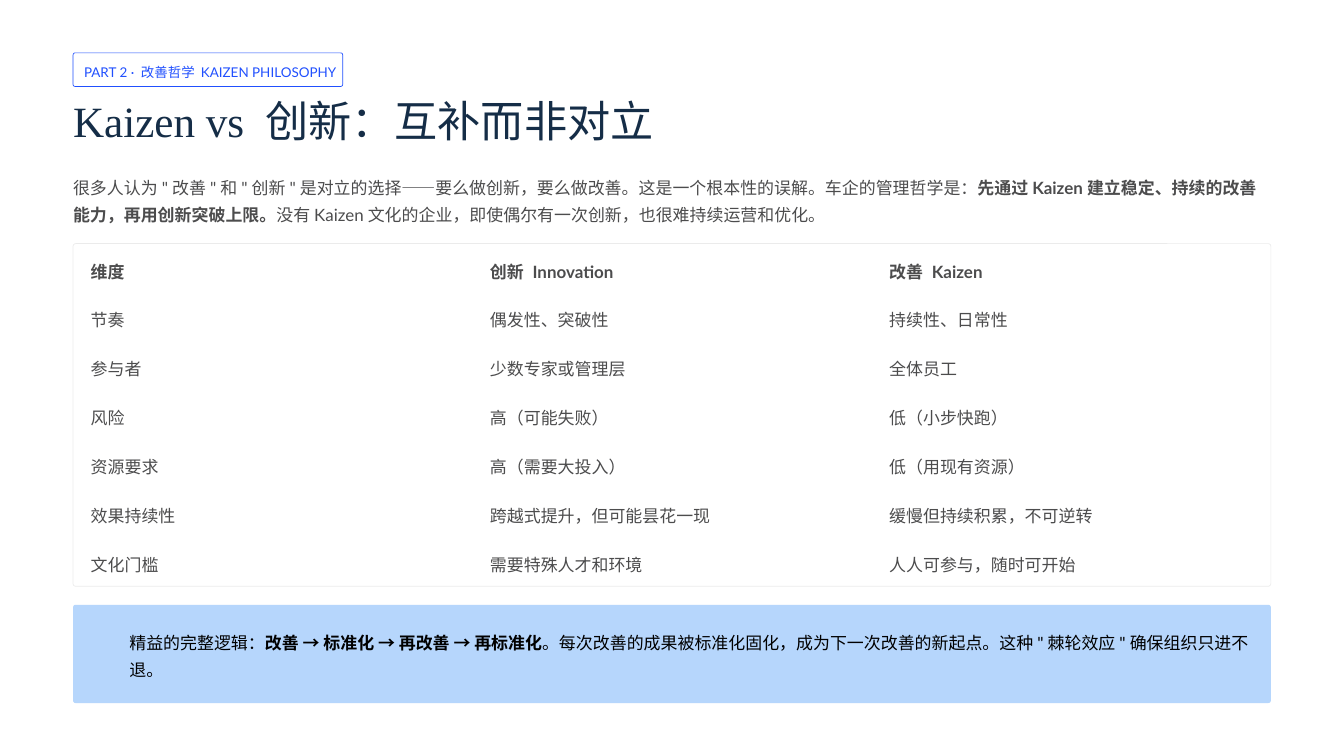
from lxml.etree import SubElement
from pptx import Presentation
from pptx.dml.color import RGBColor
from pptx.enum.shapes import MSO_SHAPE as Preset
from pptx.enum.text import MSO_ANCHOR as Anchor, MSO_AUTO_SIZE as AutoSize, PP_ALIGN as Align
from pptx.oxml.ns import qn
from pptx.util import Inches, Pt

COLORS = {
    "white": "FFFFFF", "blue": "2150FE", "navy": "152D47",
    "gray": "4C4C4D", "black": "000000", "sky": "B6D6FC",
}
LEFT, WIDTH = 0.87, 14.26
BODY = {"name": "Lato", "size": Pt(14.5), "color": "gray", "spacing": Pt(23)}
TAG = {**BODY, "size": Pt(11.5), "color": "blue", "spacing": Pt(18.5)}
TITLE = {**BODY, "name": "Times New Roman", "size": Pt(37), "color": "navy", "spacing": Pt(46)}
CALLOUT = {**BODY, "color": "black"}

INTRO = [
    ("很多人认为\"改善\"和\"创新\"是对立的选择——要么做创新，要么做改善。这是一个根本性的误解。车企的管理哲学是：", False),
    ("先通过Kaizen建立稳定、持续的改善能力，再用创新突破上限。", True),
    ("没有Kaizen文化的企业，即使偶尔有一次创新，也很难持续运营和优化。", False),
]
COMPARISON = [
    ("维度", "创新 Innovation", "改善 Kaizen"),
    ("节奏", "偶发性、突破性", "持续性、日常性"),
    ("参与者", "少数专家或管理层", "全体员工"),
    ("风险", "高（可能失败）", "低（小步快跑）"),
    ("资源要求", "高（需要大投入）", "低（用现有资源）"),
    ("效果持续性", "跨越式提升，但可能昙花一现", "缓慢但持续积累，不可逆转"),
    ("文化门槛", "需要特殊人才和环境", "人人可参与，随时可开始"),
]
LOGIC = [
    ("精益的完整逻辑：", False),
    ("改善 → 标准化 → 再改善 → 再标准化", True),
    ("。每次改善的成果被标准化固化，成为下一次改善的新起点。这种\"棘轮效应\"确保组织只进不退。", False),
]


def color(name):
    return RGBColor.from_string(COLORS[name])


def set_attributes(target, values):
    for name, value in values.items():
        setattr(target, name, value)


def write(frame, runs, style):
    paragraph = frame.paragraphs[0]
    set_attributes(paragraph, {"alignment": Align.LEFT, "line_spacing": style["spacing"]})
    for text, bold in runs:
        run = paragraph.add_run()
        run.text = text
        set_attributes(run.font, {"name": style["name"], "size": style["size"], "bold": bold})
        run.font.color.rgb = color(style["color"])


def format_frame(frame, wrap):
    set_attributes(frame, {
        "margin_left": 0, "margin_top": 0, "margin_right": 0, "margin_bottom": 0,
        "word_wrap": wrap, "auto_size": AutoSize.NONE, "vertical_anchor": Anchor.TOP,
    })


def add_text(slide, box, runs, style, wrap=True):
    shape = slide.shapes.add_textbox(*map(Inches, box))
    format_frame(shape.text_frame, wrap)
    write(shape.text_frame, runs, style)


def add_title(slide, box, text):
    title = slide.shapes.title
    left, top, width, height = map(Inches, box)
    set_attributes(title, {"left": left, "top": top, "width": width, "height": height})
    format_frame(title.text_frame, True)
    write(title.text_frame, [(text, False)], TITLE)


def add_panel(slide, box, rounding, fill=None, line=None, opacity=100):
    panel = slide.shapes.add_shape(Preset.ROUNDED_RECTANGLE, *map(Inches, box))
    panel.shadow.inherit = False
    panel.adjustments[0] = rounding
    if fill:
        panel.fill.solid()
        panel.fill.fore_color.rgb = color(fill)
    else:
        panel.fill.background()
    if line:
        panel.line.width = Pt(0.6)
        panel.line.color.rgb = color(line)
        if opacity < 100:
            tint = next(panel.line._ln.iter(qn("a:srgbClr")))
            SubElement(tint, qn("a:alpha"), val=str(opacity * 1000))
    else:
        panel.line.fill.background()


def add_comparison(slide, box, rows):
    graphic = slide.shapes.add_table(len(rows), len(rows[0]), *map(Inches, box))
    table = graphic.table
    table.horz_banding = False
    for row_index, texts in enumerate(rows):
        for column_index, text in enumerate(texts):
            cell = table.cell(row_index, column_index)
            cell.fill.background()
            set_attributes(cell, {
                "margin_left": Inches(0.21), "margin_right": Inches(0.21),
                "margin_top": Inches(0.15), "margin_bottom": 0,
                "vertical_anchor": Anchor.TOP,
            })
            write(cell.text_frame, [(text, row_index == 0)], BODY)


def main():
    presentation = Presentation()
    set_attributes(presentation, {"slide_width": Inches(16), "slide_height": Inches(9)})
    slide = presentation.slides.add_slide(presentation.slide_layouts[5])
    slide.background.fill.solid()
    slide.background.fill.fore_color.rgb = color("white")

    # Section tag and title
    add_panel(slide, (LEFT, 0.63, 3.21, 0.4), 0.062, line="blue")
    add_text(slide, (1, 0.7, 2.95, 0.26), [("PART 2 · 改善哲学 KAIZEN PHILOSOPHY", False)], TAG, wrap=False)
    add_title(slide, (LEFT, 1.1, WIDTH, 0.64), "Kaizen vs 创新：互补而非对立")

    # Introduction
    add_text(slide, (LEFT, 2.04, WIDTH, 0.64), INTRO, BODY)

    # Comparison table in a thin frame
    add_comparison(slide, (LEFT, 2.9, WIDTH, 4.07), COMPARISON)
    add_panel(slide, (LEFT, 2.9, WIDTH, 4.08), 0.008, line="black", opacity=8)

    # Callout
    add_panel(slide, (LEFT, 7.2, WIDTH, 1.17), 0.026, fill="sky")
    add_text(slide, (1.54, 7.45, 13.39, 0.64), LOGIC, CALLOUT)

    presentation.save("out.pptx")


if __name__ == "__main__":
    main()
